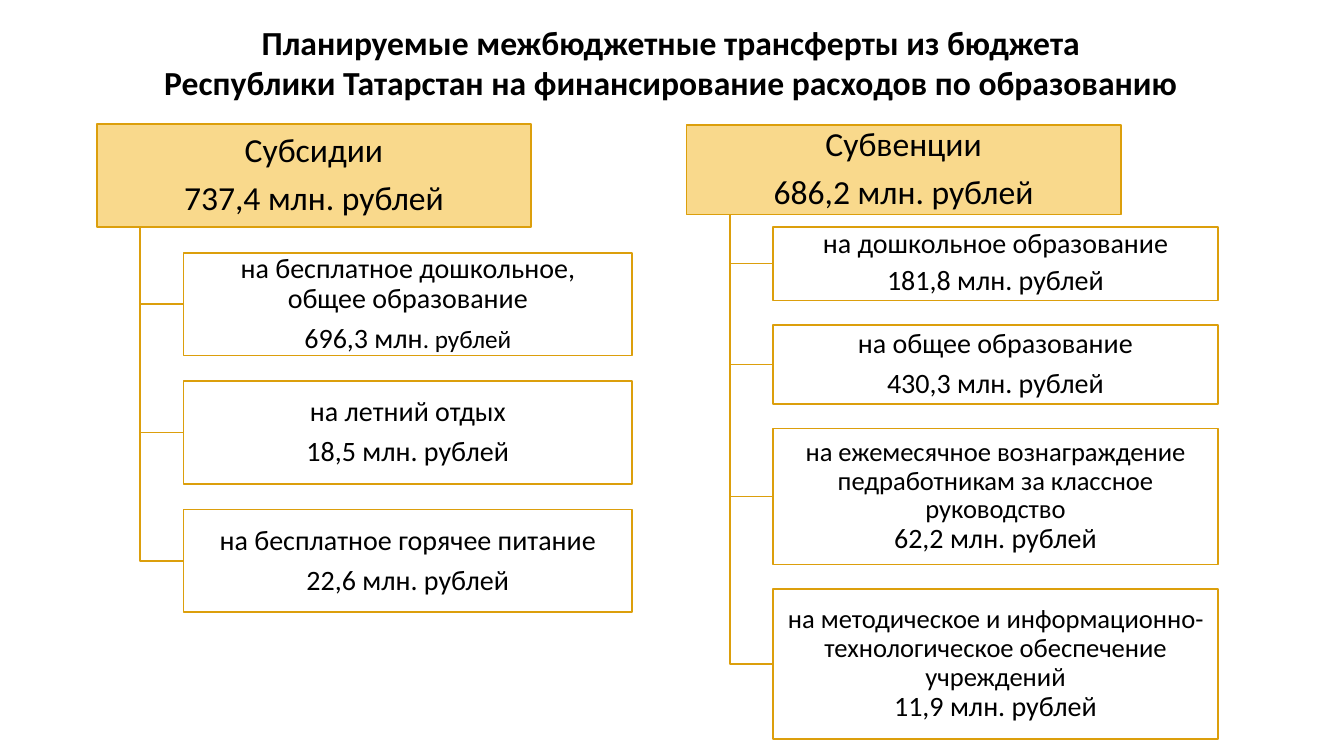
"""Build a slide of planned education transfers: subsidies and subventions."""
from dataclasses import dataclass

from lxml import etree
from pptx import Presentation
from pptx import util as u
from pptx.dml import color
from pptx.enum import shapes, text
from pptx.oxml import ns


@dataclass(frozen=True)
class Theme:
    font: str = "Calibri"
    ink: color.RGBColor = color.RGBColor(0x00, 0x00, 0x00)
    gold: color.RGBColor = color.RGBColor(0xDC, 0x9F, 0x0C)
    header_fill: color.RGBColor = color.RGBColor(0xF9, 0xD9, 0x8C)
    item_fill: color.RGBColor = color.RGBColor(0xFF, 0xFF, 0xFF)
    title_size: float = 24
    header_size: float = 24
    item_size: float = 20
    long_size: float = 19
    small_size: float = 18
    outline: float = 1.25


theme = Theme()


def write(frame, paragraphs, spacing=1.0, after=0, bold=False):
    for index, runs in enumerate(paragraphs):
        paragraph = frame.paragraphs[0] if index == 0 else frame.add_paragraph()
        paragraph.alignment = text.PP_ALIGN.CENTER
        paragraph.line_spacing = spacing
        paragraph.space_after = u.Pt(after)
        for words, size in runs:
            for number, line in enumerate(words.split("\n")):
                if number:
                    paragraph.add_line_break()
                run = paragraph.add_run()
                run.text = line
                run.font.name = theme.font
                run.font.size = u.Pt(size)
                run.font.bold = bold
                run.font.color.rgb = theme.ink


def add_box(group, left, top, width, height, fill, inset):
    shape = group.shapes.add_shape(
        shapes.MSO_SHAPE.RECTANGLE, u.Pt(left), u.Pt(top), u.Pt(width), u.Pt(height))
    shape.shadow.inherit = False
    shape.fill.solid()
    shape.fill.fore_color.rgb = fill
    shape.line.color.rgb = theme.gold
    shape.line.width = u.Pt(theme.outline)
    frame = shape.text_frame
    frame.word_wrap = True
    frame.vertical_anchor = text.MSO_ANCHOR.MIDDLE
    frame.margin_left = frame.margin_right = u.Pt(inset)
    frame.margin_top = frame.margin_bottom = u.Pt(2.2)
    return shape


presentation = Presentation()
presentation.slide_width = u.Pt(960)
presentation.slide_height = u.Pt(540)
slide = presentation.slides.add_slide(presentation.slide_layouts[6])

title = slide.shapes.add_textbox(u.Pt(94.3), u.Pt(12.2), u.Pt(769.7), u.Pt(65.5))
title.text_frame.word_wrap = False
title.text_frame.auto_size = text.MSO_AUTO_SIZE.SHAPE_TO_FIT_TEXT
write(title.text_frame, [
    [("Планируемые межбюджетные трансферты из бюджета", theme.title_size)],
    [("Республики Татарстан на финансирование расходов по образованию", theme.title_size)],
], bold=True)

normal, long, small = theme.item_size, theme.long_size, theme.small_size
branches = [
    dict(name="Субсидии", total="737,4 млн. рублей", left=69.1, top=88.6, height=73.4,
         first=180.6, gap=18.3, width=320.4, items=[
             (73.4, 0.9, 7, [[("на бесплатное дошкольное,\nобщее образование", normal)],
                             [("696,3 млн", normal), (". рублей", small)]]),
             (73.4, 0.9, 7, [[("на летний отдых", normal)],
                             [("18,5 млн. рублей", normal)]]),
             (73.4, 0.9, 7, [[("на бесплатное горячее питание", normal)],
                             [("22,6 млн. рублей", normal)]]),
         ]),
    dict(name="Субвенции", total="686,2 млн. рублей", left=490.3, top=89.2, height=64,
         first=162, gap=17.3, width=317.5, items=[
             (52.6, 0.8, 7, [[("на дошкольное образование", normal)],
                             [("181,8 млн. рублей", normal)]]),
             (56.9, 0.9, 7, [[("на общее образование", normal)],
                             [("430,3 млн. рублей", normal)]]),
             (97.2, 0.9, 0, [[("на ежемесячное вознаграждение педработникам "
                               "за классное руководство", long)],
                             [("62,2 млн. рублей", normal)]]),
             (107.3, 0.9, 0, [[("на методическое и информационно-технологическое "
                                "обеспечение учреждений", long)],
                              [("11,9 млн. рублей", normal)]]),
         ]),
]
header_width = 310.3
step = header_width / 10

for branch in branches:
    group = slide.shapes.add_group_shape()
    header = add_box(group, branch["left"], branch["top"], header_width,
                     branch["height"], theme.header_fill, 3.6)
    write(header.text_frame, [[(branch["name"], theme.header_size)],
                              [(branch["total"], theme.header_size)]], 0.9, 8.4)
    trunk = branch["left"] + step
    item_left = trunk + step
    header_bottom = branch["top"] + branch["height"]
    item_top = branch["first"]
    for height, spacing, after, paragraphs in branch["items"]:
        middle = item_top + height / 2
        builder = group.shapes.build_freeform(u.Pt(trunk), u.Pt(header_bottom))
        builder.add_line_segments([(u.Pt(trunk), u.Pt(middle)),
                                   (u.Pt(item_left), u.Pt(middle))], close=False)
        elbow = builder.convert_to_shape()
        elbow.shadow.inherit = False
        elbow.fill.background()
        elbow.line.color.rgb = theme.gold
        elbow.line.width = u.Pt(theme.outline)

        item = add_box(group, item_left, item_top, branch["width"], height,
                       theme.item_fill, 2.9)
        fill_color = item.element.spPr.find(ns.qn("a:solidFill"))[0]
        etree.SubElement(fill_color, ns.qn("a:alpha"), val="90000")
        write(item.text_frame, paragraphs, spacing, after)
        item_top += height + branch["gap"]

presentation.save("out.pptx")
